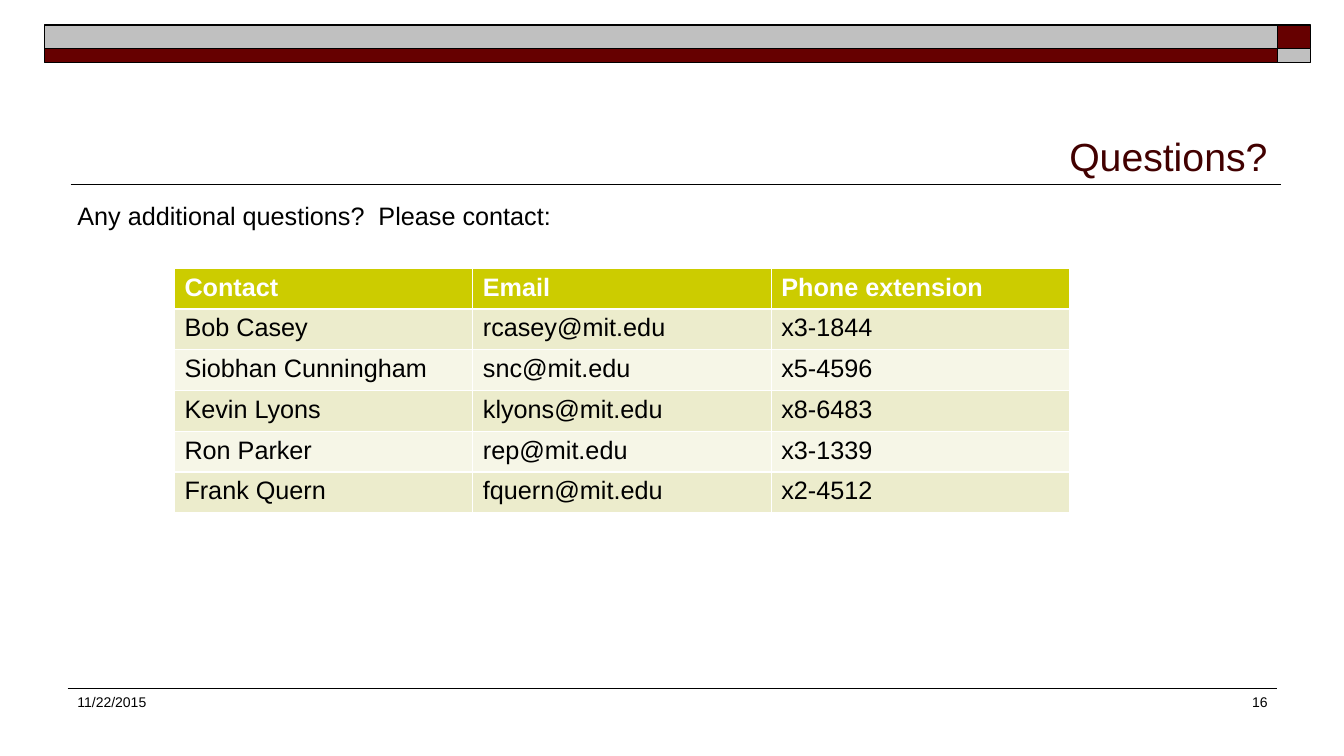
"""Build the closing slide that lists whom to contact with questions."""
from pptx import Presentation
from pptx.dml.color import RGBColor
from pptx.enum.shapes import MSO_CONNECTOR, MSO_SHAPE
from pptx.enum.text import MSO_ANCHOR, MSO_AUTO_SIZE, PP_ALIGN
from pptx.oxml.ns import qn
from pptx.util import Inches, Pt
from lxml import etree

BLACK = RGBColor(0x00, 0x00, 0x00)
WHITE = RGBColor(0xFF, 0xFF, 0xFF)
MAROON = RGBColor(0x66, 0x00, 0x00)
DARK_MAROON = RGBColor(0x42, 0x00, 0x00)
GRAY = RGBColor(0xC0, 0xC0, 0xC0)
OLIVE = RGBColor(0xCC, 0xCC, 0x00)
BANDS = (RGBColor(0xF6, 0xF6, 0xE7), RGBColor(0xEC, 0xEC, 0xCC))

TITLE = "Questions?"
INTRO = "Any additional questions?  Please contact:"
DATE = "11/22/2015"
PAGE_NUMBER = "16"
CONTACTS = [
    ("Contact", "Email", "Phone extension"),
    ("Bob Casey", "rcasey@mit.edu", "x3-1844"),
    ("Siobhan Cunningham", "snc@mit.edu", "x5-4596"),
    ("Kevin Lyons", "klyons@mit.edu", "x8-6483"),
    ("Ron Parker", "rep@mit.edu", "x3-1339"),
    ("Frank Quern", "fquern@mit.edu", "x2-4512"),
]
BAND_COLUMNS = [(0.44, 12.23), (12.67, 0.33)]
BAND_ROWS = [(0.25, 0.23, (GRAY, MAROON)), (0.48, 0.14, (MAROON, GRAY))]
RULES = [(0.7, 12.71, 1.83, 1), (0.67, 12.67, 6.83, 0.75)]
COLUMN_WIDTH = 2.96
ROW_HEIGHT = 0.405


def format_paragraph(para, size, color, bold=False):
    """Set the font of every run in a paragraph."""
    for span in para.runs:
        span.font.name = "Arial"
        span.font.size = Pt(size)
        span.font.bold = bold
        span.font.color.rgb = color


def add_text(page, text, left, top, width, height, size, align=PP_ALIGN.LEFT):
    """Add a wrapped text box and return its paragraph."""
    box = page.shapes.add_textbox(
        Inches(left), Inches(top), Inches(width), Inches(height))
    box.text_frame.word_wrap = True
    para = box.text_frame.paragraphs[0]
    para.text = text
    para.alignment = align
    format_paragraph(para, size, BLACK)
    return para


def add_band(page):
    """Draw the two-tone band along the top."""
    for top, height, colors in BAND_ROWS:
        for (left, width), color in zip(BAND_COLUMNS, colors):
            block = page.shapes.add_shape(
                MSO_SHAPE.RECTANGLE,
                Inches(left), Inches(top), Inches(width), Inches(height))
            block.shadow.inherit = False
            block.fill.solid()
            block.fill.fore_color.rgb = color
            block.line.color.rgb = BLACK
            block.line.width = Pt(1)


def add_rules(page):
    """Draw the lines under the title and above the footer."""
    for left, right, top, weight in RULES:
        rule = page.shapes.add_connector(
            MSO_CONNECTOR.STRAIGHT,
            Inches(left), Inches(top), Inches(right), Inches(top))
        rule.line.color.rgb = BLACK
        rule.line.width = Pt(weight)
        etree.SubElement(rule._element.spPr, qn("a:effectLst"))


def add_title(page):
    """Place and format the title placeholder."""
    title = page.shapes.title
    title.left, title.top = Inches(0.67), Inches(0.58)
    title.width, title.height = Inches(12), Inches(1.25)
    frame = title.text_frame
    frame.text = TITLE
    frame.auto_size = MSO_AUTO_SIZE.NONE
    frame.vertical_anchor = MSO_ANCHOR.BOTTOM
    frame.paragraphs[0].alignment = PP_ALIGN.RIGHT
    format_paragraph(frame.paragraphs[0], 28, DARK_MAROON)


def add_contacts(page):
    """Add the contact table with a header and alternating rows."""
    rows, columns = len(CONTACTS), len(CONTACTS[0])
    table = page.shapes.add_table(
        rows, columns, Inches(1.73), Inches(2.66),
        Inches(COLUMN_WIDTH * columns), Inches(ROW_HEIGHT * rows)).table
    for column in table.columns:
        column.width = Inches(COLUMN_WIDTH)
    for row_index, contact in enumerate(CONTACTS):
        header = row_index == 0
        for column_index, text in enumerate(contact):
            cell = table.cell(row_index, column_index)
            cell.fill.solid()
            cell.fill.fore_color.rgb = OLIVE if header else BANDS[row_index % 2]
            para = cell.text_frame.paragraphs[0]
            para.text = text
            format_paragraph(para, 18, WHITE if header else BLACK, header)


def main():
    """Build and save the deck."""
    deck = Presentation()
    deck.slide_width, deck.slide_height = Inches(13.33), Inches(7.5)
    page = deck.slides.add_slide(deck.slide_layouts[5])
    add_band(page)
    add_rules(page)
    add_title(page)
    intro = add_text(page, INTRO, 0.67, 2, 12, 0.4, 18)
    intro.line_spacing = 0.8
    add_contacts(page)
    add_text(page, DATE, 0.67, 6.83, 2.44, 0.5, 10)
    add_text(page, PAGE_NUMBER, 9.89, 6.83, 2.78, 0.5, 10, PP_ALIGN.RIGHT)
    deck.save("out.pptx")


if __name__ == "__main__":
    main()
